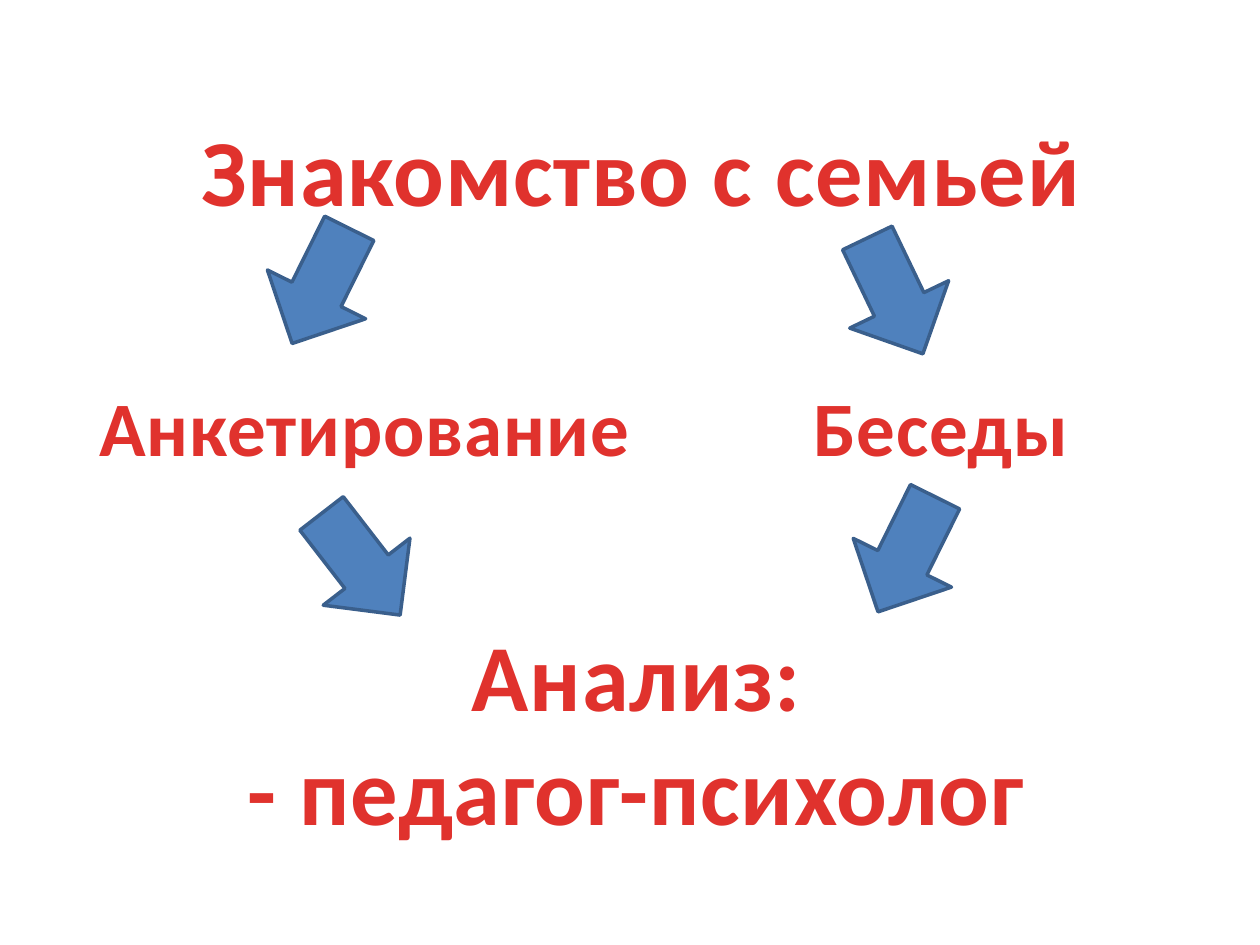
import pptx
import pptx.util
import pptx.dml.color
import pptx.enum.shapes
import pptx.enum.text

Cm = pptx.util.Cm
hues = {"text": "E0322D", "fill": "4F81BD", "edge": "3A5F8C"}


def tint(name):
    return pptx.dml.color.RGBColor.from_string(hues[name])


def write(text, shape, size=54):
    frame = shape.text_frame
    frame.text = text
    frame.word_wrap = False
    frame.auto_size = pptx.enum.text.MSO_AUTO_SIZE.SHAPE_TO_FIT_TEXT
    frame.vertical_anchor = pptx.enum.text.MSO_ANCHOR.TOP
    for para in frame.paragraphs:
        para.alignment = pptx.enum.text.PP_ALIGN.CENTER
        for run in para.runs:
            run.font.name = "Calibri"
            run.font.size = pptx.util.Pt(size)
            run.font.bold = True
            run.font.color.rgb = tint("text")
            run.font._element.set("spc", "50")


deck = pptx.Presentation()
deck.slide_width, deck.slide_height = Cm(25.4), Cm(19.05)
slide = deck.slides.add_slide(deck.slide_layouts[5])
shapes = slide.shapes

title = shapes.title
title.left, title.top = Cm(3.71), Cm(2.13)
title.width, title.height = Cm(18.44), Cm(2.57)
write("Знакомство с семьей", title)

labels = [
    ("Анкетирование", 1.7, 7.52, 11.3, 2.13, 44),
    ("Беседы", 16.1, 7.52, 5.74, 2.13, 44),
    ("Анализ:\n- педагог-психолог", 4.67, 12.32, 16.33, 4.88, 54),
]
for text, left, top, width, height, size in labels:
    box = shapes.add_textbox(Cm(left), Cm(top), Cm(width), Cm(height))
    write(text, box, size=size)

arrows = [
    (5.36, 4.47, 26.4),
    (16.94, 4.67, 334.4),
    (6.17, 10.08, 322.3),
    (17.17, 9.88, 26.4),
]
for left, top, angle in arrows:
    arrow = shapes.add_shape(
        pptx.enum.shapes.MSO_SHAPE.DOWN_ARROW,
        Cm(left), Cm(top), Cm(2.21), Cm(2.59),
    )
    arrow.rotation = angle
    arrow.shadow.inherit = False
    arrow.fill.solid()
    arrow.fill.fore_color.rgb = tint("fill")
    arrow.line.color.rgb = tint("edge")
    arrow.line.width = pptx.util.Pt(2)

deck.save("out.pptx")
